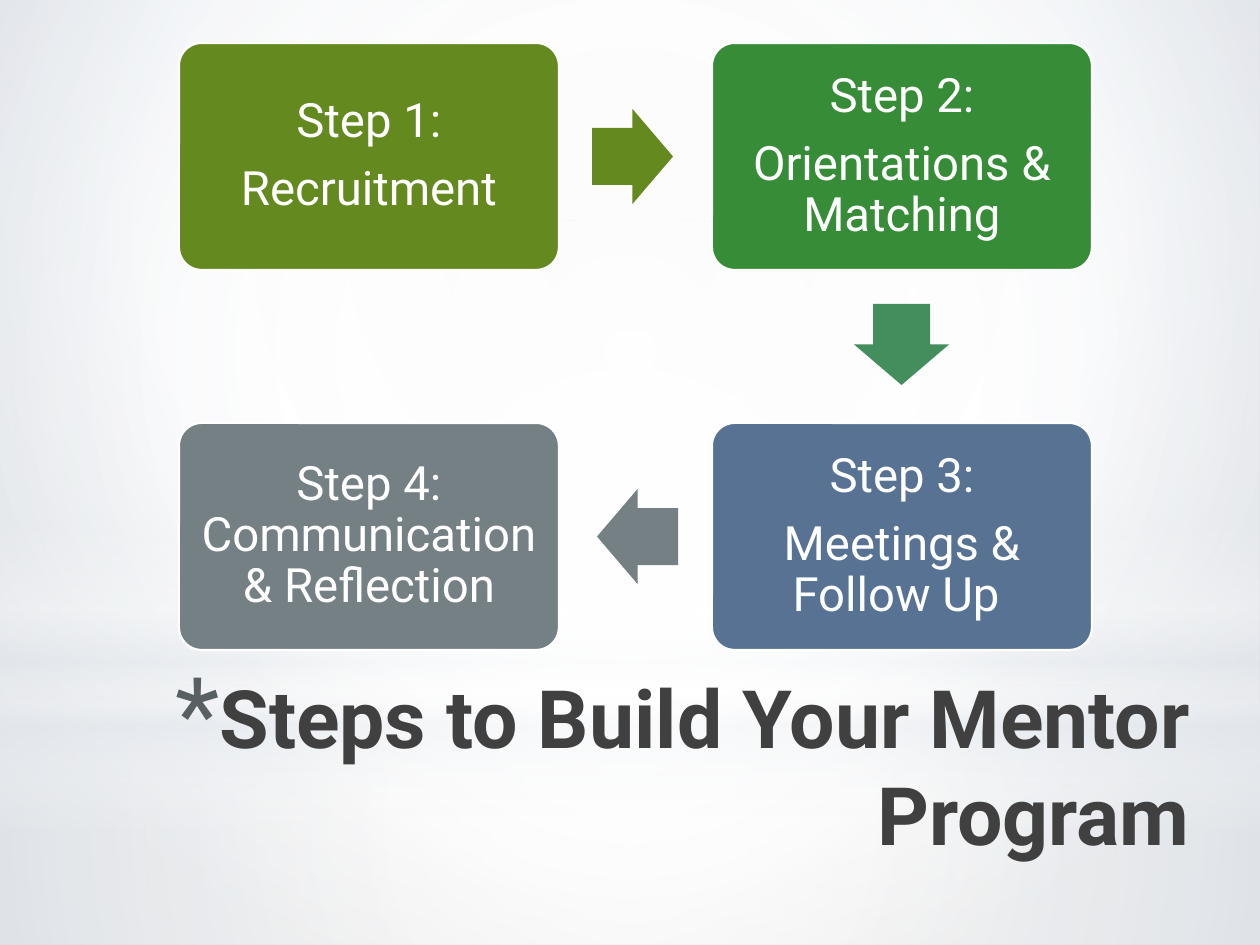
from lxml.etree import SubElement as Sub
from pptx import Presentation
from pptx.dml.color import RGBColor as RGB
from pptx.enum.shapes import MSO_SHAPE as Kind
from pptx.enum.text import MSO_ANCHOR as Anchor, MSO_AUTO_SIZE as Fit, PP_ALIGN as Align
from pptx.oxml.ns import qn
from pptx.util import Emu, Pt

WHITE = RGB(0xFF, 0xFF, 0xFF)
PALE = RGB(0xE4, 0xE9, 0xEF)
MIST = RGB(0xF4, 0xF4, 0xF4)
SILVER = RGB(0xCC, 0xCC, 0xCC)
INK = RGB(0x40, 0x40, 0x40)
STAR = RGB(0x58, 0x60, 0x64)
OLIVE = RGB(0x63, 0x89, 0x1F)
GREEN = RGB(0x37, 0x8D, 0x37)
TEAL = RGB(0x44, 0x8D, 0x5D)
BLUE = RGB(0x57, 0x72, 0x93)
GRAY = RGB(0x75, 0x80, 0x85)
FONT = "Roboto"
PX = 914400 / 126


def write(frame, text, size, color, bold=False, align=Align.CENTER,
          anchor=Anchor.MIDDLE, line=None, after=0):
    frame.word_wrap = True
    frame.auto_size = Fit.NONE
    frame.vertical_anchor = anchor
    frame.text = text
    for para in frame.paragraphs:
        para.alignment = align
        para.line_spacing = line
        para.space_after = Pt(after)
        font = para.runs[0].font
        font.name, font.size, font.bold = FONT, Pt(size), bold
        font.color.rgb = color


def wash(grad, stops, rect=None):
    for child in list(grad):
        grad.remove(child)
    row = Sub(grad, qn("a:gsLst"))
    for pos, color, alpha in stops:
        stop = Sub(row, qn("a:gs"), pos=str(pos * 1000))
        tint = Sub(stop, qn("a:srgbClr"), val=str(color))
        Sub(tint, qn("a:alpha"), val=str(alpha * 1000))
    if rect:
        way = Sub(grad, qn("a:path"), path="circle")
        Sub(way, qn("a:fillToRect"),
            {side: str(part * 1000) for side, part in zip("ltrb", rect)})
    else:
        Sub(grad, qn("a:lin"), ang="5400000", scaled="0")


deck = Presentation()
deck.slide_width, deck.slide_height = Emu(round(1260 * PX)), Emu(round(945 * PX))
slide = deck.slides.add_slide(deck.slide_layouts[5])
shapes = slide.shapes

slide.background.fill.gradient()
wash(slide.element.xpath(".//p:bg//a:gradFill")[0],
     [(0, MIST, 100), (60, WHITE, 100), (100, SILVER, 100)], (20, 10, 20, 60))

MID = (50, 50, 50, 50)
layers = [
    (Kind.RECTANGLE, 703, 242, MID,
     [(0, WHITE, 91), (37, WHITE, 76), (100, PALE, 79)]),
    (Kind.RECTANGLE, 0, 703, MID,
     [(0, WHITE, 89), (48, WHITE, 62), (100, PALE, 79)]),
    (Kind.RECTANGLE, 519, 315, None,
     [(0, WHITE, 0), (29, WHITE, 30), (45, PALE, 40),
      (55, WHITE, 26), (65, PALE, 60), (100, WHITE, 0)]),
    (Kind.OVAL, 220, 703, MID, [(0, WHITE, 100), (56, WHITE, 0)]),
]
for kind, top, high, rect, stops in layers:
    layer = shapes.add_shape(kind, 0, Emu(round(top * PX)),
                             deck.slide_width, Emu(round(high * PX)))
    layer.shadow.inherit = False
    layer.line.fill.background()
    layer.fill.gradient()
    wash(layer.element.xpath("./p:spPr/a:gradFill")[0], stops, rect)

title = shapes.title
shapes.element.append(title.element)
title.left, title.top, title.width, title.height = [
    Emu(round(n * PX)) for n in (53, 662, 1149, 157)]
write(title.text_frame, "Steps to Build Your Mentor Program", 46, INK,
      bold=True, align=Align.RIGHT, anchor=Anchor.TOP)
props = title.text_frame.paragraphs[0]._p.get_or_add_pPr()
props.set("marL", str(round(44 * PX)))
props.set("indent", str(round(-44 * PX)))
Sub(Sub(props, qn("a:buClr")), qn("a:srgbClr"), val=str(STAR))
Sub(props, qn("a:buSzPct"), val="128000")
Sub(props, qn("a:buFont"), typeface=FONT)
Sub(props, qn("a:buChar"), char="*")

steps = [
    (179, 43, OLIVE, "Step 1:\nRecruitment"),
    (712, 43, GREEN, "Step 2:\nOrientations & Matching"),
    (712, 423, BLUE, "Step 3:\nMeetings & Follow Up "),
    (179, 423, GRAY, "Step 4: Communication & Reflection"),
]
for left, top, color, text in steps:
    box = shapes.add_shape(Kind.ROUNDED_RECTANGLE,
                           *[Emu(round(n * PX)) for n in (left, top, 380, 227)])
    box.adjustments[0] = 0.1
    box.shadow.inherit = False
    box.fill.solid()
    box.fill.fore_color.rgb = color
    box.line.color.rgb = WHITE
    box.line.width = Pt(1.25)
    frame = box.text_frame
    frame.margin_left = frame.margin_right = Emu(round(14 * PX))
    frame.margin_top = frame.margin_bottom = Emu(round(14 * PX))
    write(frame, text, 27, WHITE, line=0.9, after=9.45)

for left, top, turn, color in [(592, 109, 0, OLIVE), (861, 297, 90, TEAL),
                               (597, 489, 180, GRAY)]:
    arrow = shapes.add_shape(Kind.RIGHT_ARROW,
                             *[Emu(round(n * PX)) for n in (left, top, 81, 95)])
    arrow.adjustments[0], arrow.adjustments[1] = 0.6, 0.5
    arrow.rotation = turn
    arrow.shadow.inherit = False
    arrow.fill.solid()
    arrow.fill.fore_color.rgb = color
    arrow.line.fill.background()

deck.save("out.pptx")
